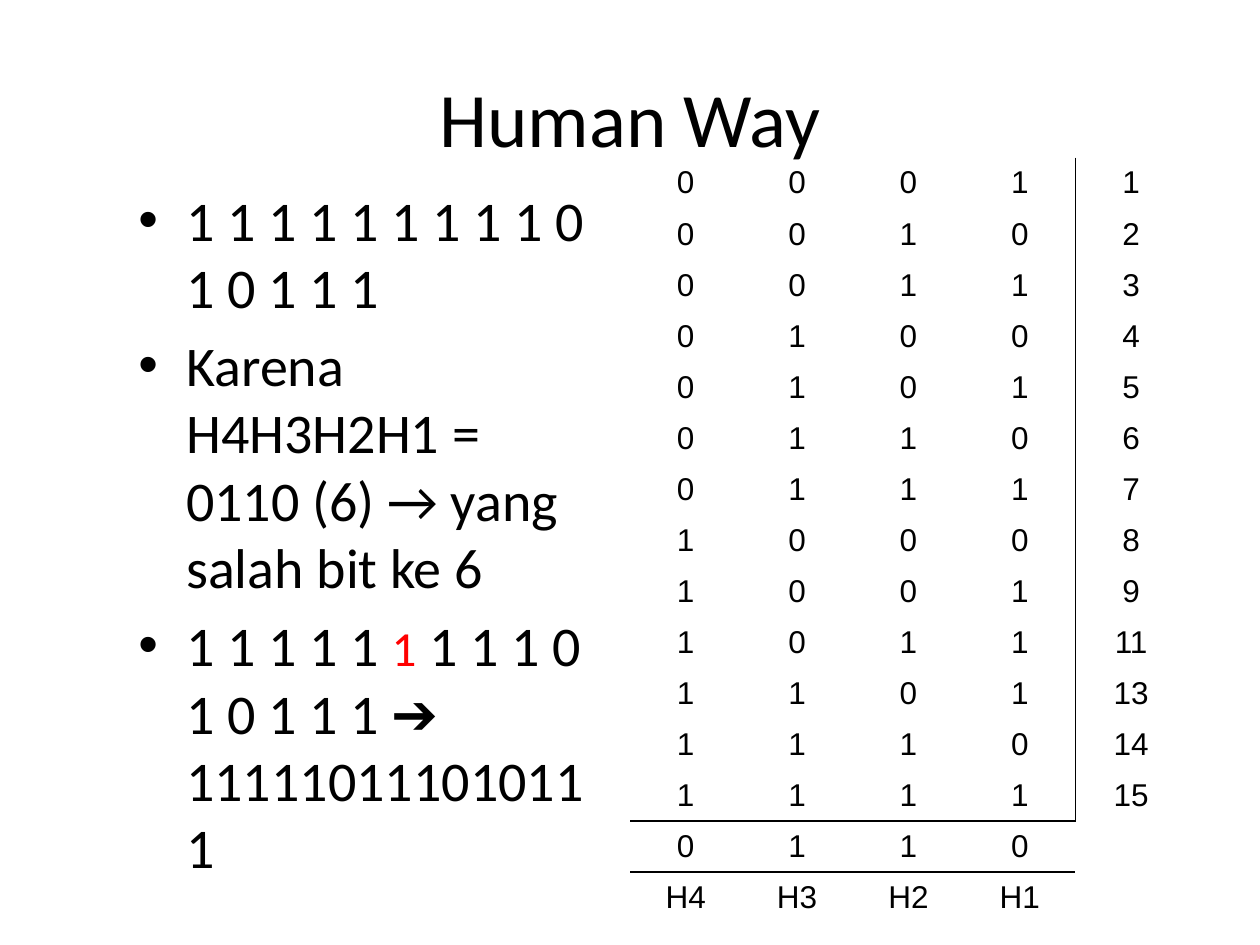
from dataclasses import dataclass

from lxml import etree
from pptx import Presentation
from pptx.dml.color import RGBColor
from pptx.enum.text import MSO_ANCHOR, PP_ALIGN
from pptx.oxml.ns import qn
from pptx.util import Inches, Pt

CENTER = PP_ALIGN.CENTER
MIDDLE = MSO_ANCHOR.MIDDLE
TITLE_ONLY = 5
BLACK = "000000"
RED = "FF0000"
PLAIN_TABLE = "{2D5ABB26-0587-4C30-8999-92F81FD0307C}"
POSITIONS = [*range(1, 10), 11, 13, 14, 15]
CHECK_BITS = 4
COL_W = 4.42 / 5
ROW_H = 6.08 / 15


@dataclass
class Span:
    text: str
    size: int = 32
    color: str = BLACK


BULLETS = [
    [Span("1 1 1 1 1 1 1 1 1 0 1 0 1 1 1")],
    [Span("Karena H4H3H2H1 = 0110 (6) → yang salah bit ke 6")],
    [
        Span("1 1 1 1 1 "),
        Span("1", 28, RED),
        Span(" 1 1 1 0 1 0 1 1 1 ➔ 111110111010111"),
    ],
]


def style_run(r, font: str, size: int, color: str = BLACK) -> None:
    r.font.name = font
    r.font.size = Pt(size)
    r.font.color.rgb = RGBColor.from_string(color)


def place(sp, left: float, top: float, width: float, height: float) -> None:
    sp.left, sp.top = Inches(left), Inches(top)
    sp.width, sp.height = Inches(width), Inches(height)


def add_bullet(p, spans: list[Span]) -> None:
    p.space_before = Pt(6.4)
    pPr = p._p.get_or_add_pPr()
    pPr.set("marL", str(Inches(0.38)))
    pPr.set("indent", str(-Inches(0.38)))
    etree.SubElement(pPr, qn("a:buFont"), typeface="Arial")
    etree.SubElement(pPr, qn("a:buChar"), char="•")
    for span in spans:
        r = p.add_run()
        r.text = span.text
        style_run(r, "Calibri", span.size, span.color)


def add_border(cell, side: str) -> None:
    tcPr = cell._tc.get_or_add_tcPr()
    ln = etree.SubElement(tcPr, qn(f"a:ln{side}"), w=str(Pt(1)))
    fill = etree.SubElement(ln, qn("a:solidFill"))
    etree.SubElement(fill, qn("a:srgbClr"), val=BLACK)


def border_sides(row: int, col: int) -> str:
    last = len(POSITIONS) - 1
    rules = {
        "L": col == CHECK_BITS and row <= last,
        "R": col == CHECK_BITS - 1 and row <= last,
        "T": col < CHECK_BITS and row == last + 1,
        "B": col < CHECK_BITS and row == last,
    }
    return "".join(side for side, drawn in rules.items() if drawn)


def fill_cell(cell, text: str, sides: str) -> None:
    for side in sides:
        add_border(cell, side)
    cell.fill.background()
    cell.vertical_anchor = MIDDLE
    cell.text_frame.text = text
    p = cell.text_frame.paragraphs[0]
    p.alignment = CENTER
    for r in p.runs:
        style_run(r, "Arial", 18)


def add_check_table(s) -> None:
    rows = [[*format(n, "04b"), str(n)] for n in POSITIONS]
    rows += [[*"0110", ""], ["H4", "H3", "H2", "H1", ""]]
    table = s.shapes.add_table(
        len(rows), CHECK_BITS + 1,
        Inches(5), Inches(1.25), Inches(4.42), Inches(6.08),
    ).table
    table.first_row = table.horz_banding = False
    table._tbl.tblPr.find(qn("a:tableStyleId")).text = PLAIN_TABLE
    for col in table.columns:
        col.width = Inches(COL_W)
    for i, values in enumerate(rows):
        table.rows[i].height = Inches(ROW_H)
        for j, text in enumerate(values):
            fill_cell(table.cell(i, j), text, border_sides(i, j))


def main() -> None:
    prs = Presentation()
    prs.slide_width, prs.slide_height = Inches(10), Inches(7.5)
    s = prs.slides.add_slide(prs.slide_layouts[TITLE_ONLY])

    title = s.shapes.title
    place(title, 0.5, 0.3, 9, 1.25)
    title.text_frame.text = "Human Way"
    title.text_frame.vertical_anchor = MIDDLE
    p = title.text_frame.paragraphs[0]
    p.alignment = CENTER
    style_run(p.runs[0], "Calibri", 44)

    body = s.shapes.add_textbox(
        Inches(1), Inches(1.42), Inches(3.83), Inches(5.58)
    )
    tf = body.text_frame
    tf.word_wrap = True
    for i, spans in enumerate(BULLETS):
        add_bullet(tf.add_paragraph() if i else tf.paragraphs[0], spans)

    add_check_table(s)
    prs.save("out.pptx")


if __name__ == "__main__":
    main()
